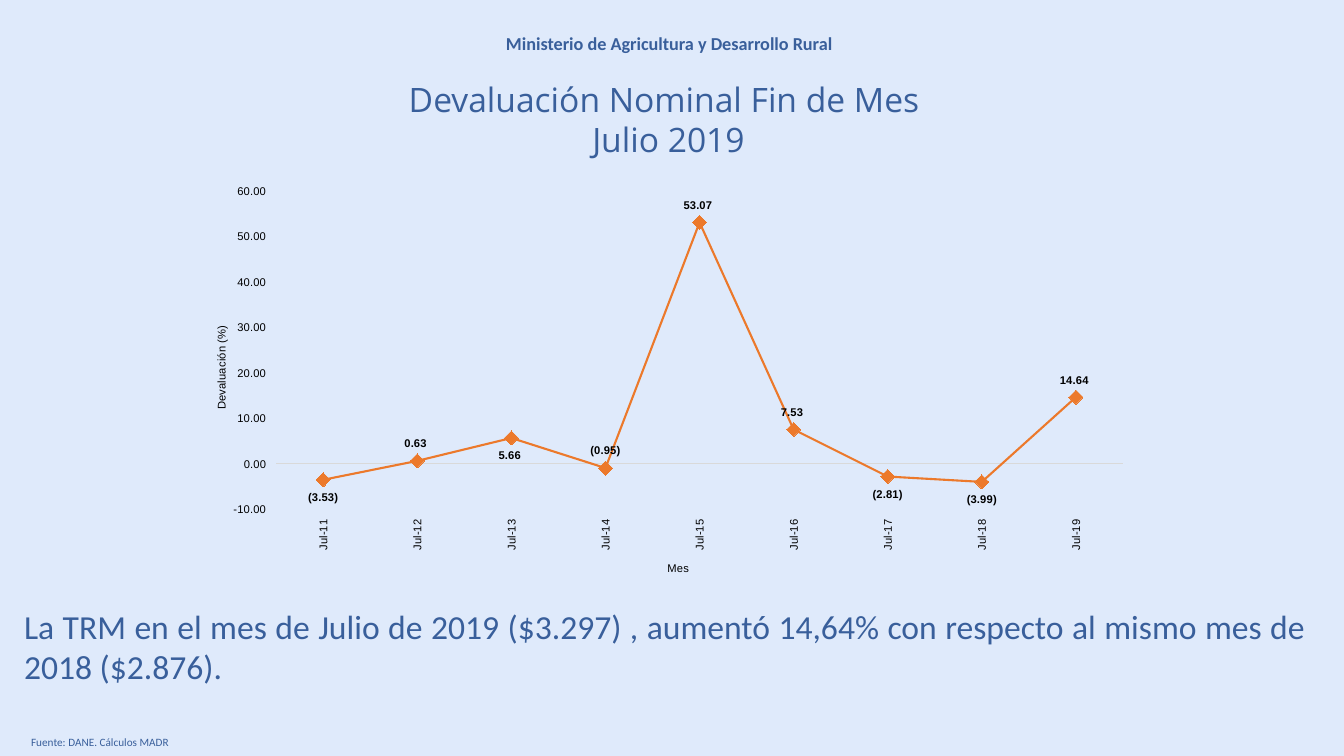
import pptx
import pptx.chart.data
import pptx.dml.color
import pptx.enum.chart
import pptx.enum.text
import pptx.oxml
import pptx.oxml.ns
import pptx.util
from pptx.util import Inches

COLORS = {"background": "DFEAFB", "text": "395F9B", "line": "EC792B",
          "marker": "ED7D31", "axis": "D9D9D9", "chart_text": "000000"}
ALIGN = pptx.enum.text.PP_ALIGN
LABEL = pptx.enum.chart.XL_LABEL_POSITION
NUMBER_FORMAT = "#,##0.00_);(#,##0.00)"
DEVALUATION = [-3.53, 0.63, 5.66, -0.95, 53.07, 7.53, -2.81, -3.99, 14.64]
LABELS_BELOW = [0, 2, 6, 7]
PLOT_AREA = {"x": 0.07, "y": 0.043, "w": 0.92, "h": 0.778}


def color(name):
    return pptx.dml.color.RGBColor.from_string(COLORS[name])


def style_font(font, name, size, color_name, bold=False):
    font.name = name
    font.size = pptx.util.Pt(size)
    font.bold = bold
    font.color.rgb = color(color_name)


def add_text(page, box, text, size, font="Calibri", align=ALIGN.LEFT,
             bold=False, wrap=True):
    frame = page.shapes.add_textbox(*map(Inches, box)).text_frame
    frame.word_wrap = wrap
    frame.text = text
    for para in frame.paragraphs:
        para.alignment = align
        for span in para.runs:
            style_font(span.font, font, size, "text", bold)


def set_plot_area(chart):
    """Fix the inner plot area as fractions of the chart."""
    plot_area = chart._chartSpace.chart.plotArea
    for layout in plot_area.findall(pptx.oxml.ns.qn("c:layout")):
        plot_area.remove(layout)
    sizes = "".join(f'<c:{key} val="{value}"/>' for key, value in PLOT_AREA.items())
    plot_area.insert(0, pptx.oxml.parse_xml(
        f'<c:layout {pptx.oxml.ns.nsdecls("c")}><c:manualLayout>'
        '<c:layoutTarget val="inner"/><c:xMode val="edge"/><c:yMode val="edge"/>'
        f'{sizes}</c:manualLayout></c:layout>'))


def style_axis(axis, title, title_turn, label_turn):
    axis.has_major_gridlines = False
    style_font(axis.tick_labels.font, "Arial", 8, "chart_text")
    axis.has_title = True
    frame = axis.axis_title.text_frame
    frame.text = title
    style_font(frame.paragraphs[0].runs[0].font, "Arial", 8, "chart_text")
    # Text rotation in degrees
    for body, turn in ((frame._txBody.bodyPr, title_turn),
                       (axis._element.txPr.bodyPr, label_turn)):
        body.set("rot", str(turn * 60000))
        body.set("vert", "horz")


def style_series(series):
    series.smooth = False
    series.format.line.color.rgb = color("line")
    series.format.line.width = pptx.util.Pt(1.5)
    marker = series.marker
    marker.style = pptx.enum.chart.XL_MARKER_STYLE.DIAMOND
    marker.size = 10
    marker.format.fill.solid()
    marker.format.fill.fore_color.rgb = color("marker")
    marker.format.line.color.rgb = color("marker")

    labels = series.data_labels
    labels.show_value = True
    labels.number_format = NUMBER_FORMAT
    labels.number_format_is_linked = False
    labels.position = LABEL.ABOVE
    style_font(labels.font, "Arial", 8, "chart_text", True)
    for index in LABELS_BELOW:
        label = series.points[index].data_label
        style_font(label.font, "Arial", 8, "chart_text", True)
        label.position = LABEL.BELOW


def add_devaluation_chart(page, box):
    data = pptx.chart.data.CategoryChartData(number_format=NUMBER_FORMAT)
    data.categories = [f"Jul-{year}" for year in range(11, 20)]
    data.add_series("Series 1", DEVALUATION)
    chart = page.shapes.add_chart(pptx.enum.chart.XL_CHART_TYPE.LINE_MARKERS,
                                  *map(Inches, box), data).chart
    chart.has_legend = False
    chart.has_title = False
    style_font(chart.font, "Arial", 8, "chart_text")
    chart.plots[0].vary_by_categories = False
    set_plot_area(chart)

    months, values = chart.category_axis, chart.value_axis
    style_axis(months, "Mes", 0, -90)
    months.tick_label_position = pptx.enum.chart.XL_TICK_LABEL_POSITION.LOW
    months.major_tick_mark = pptx.enum.chart.XL_TICK_MARK.NONE
    months.format.line.color.rgb = color("axis")
    months.format.line.width = pptx.util.Pt(0.75)

    style_axis(values, "Devaluación (%)", -90, 0)
    values.minimum_scale, values.maximum_scale, values.major_unit = -10, 60, 10
    values.tick_labels.number_format = "#,##0.00"
    values.tick_labels.number_format_is_linked = False
    values.format.line.fill.background()
    style_series(chart.plots[0].series[0])


def add_heading(page, box):
    left, top, width, height = box
    add_text(page, (left + 4.78, top, 3.49, 0.32),
             "Ministerio de Agricultura y Desarrollo Rural", 13, bold=True, wrap=False)
    add_text(page, (left, top + 0.46, width, height - 0.46),
             "Devaluación Nominal Fin de Mes \nJulio 2019", 24, "Open Sans", ALIGN.CENTER)


def add_footer(page, box):
    left, top, width, height = box
    add_text(page, (left, top, width, 0.91),
             "La TRM en el mes de Julio de 2019 ($3.297) , aumentó 14,64% "
             "con respecto al mismo mes de 2018 ($2.876).", 24, align=ALIGN.JUSTIFY)
    add_text(page, (left + 0.07, top + height - 0.24, width, 0.24),
             "Fuente: DANE. Cálculos MADR", 8, align=ALIGN.JUSTIFY)


def main():
    deck = pptx.Presentation()
    deck.slide_width, deck.slide_height = Inches(13.33), Inches(7.5)
    page = deck.slides.add_slide(deck.slide_layouts[6])
    page.background.fill.solid()
    page.background.fill.fore_color.rgb = color("background")
    add_heading(page, (0.14, 0.27, 12.98, 1.37))
    add_devaluation_chart(page, (2.1, 1.72, 9.13, 4.06))
    add_footer(page, (0.14, 5.96, 12.91, 1.53))
    deck.save("out.pptx")


if __name__ == "__main__":
    main()
